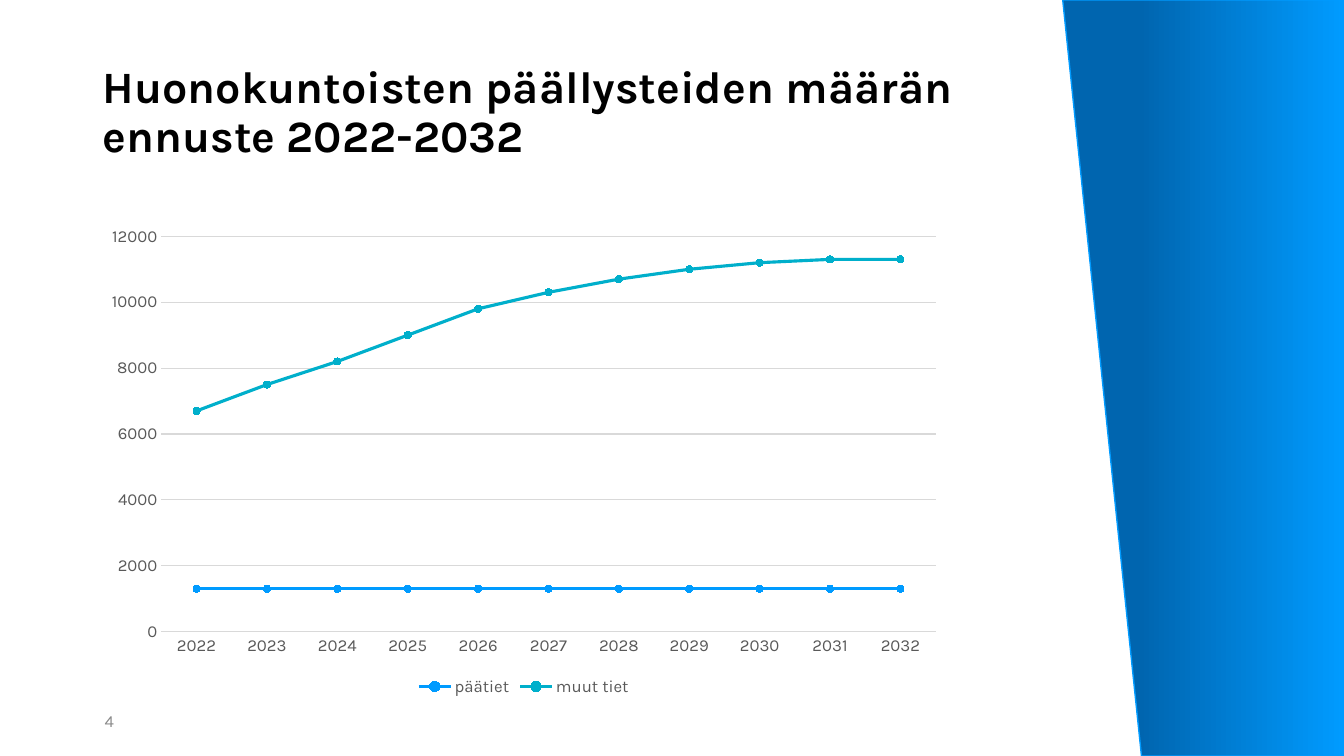
from pptx import Presentation
from pptx.chart.data import CategoryChartData
from pptx.dml.color import RGBColor
from pptx.enum.chart import XL_CHART_TYPE, XL_LEGEND_POSITION, XL_MARKER_STYLE, XL_TICK_MARK
from pptx.enum.text import MSO_ANCHOR
from pptx.util import Inches, Pt

FONT = "Karla"
BLACK = RGBColor(0x00, 0x00, 0x00)
DARK_GRAY = RGBColor(0x59, 0x59, 0x59)
GRAY = RGBColor(0x89, 0x89, 0x89)
GRID_GRAY = RGBColor(0xD9, 0xD9, 0xD9)
DEEP_BLUE = RGBColor(0x00, 0x65, 0xAF)
BLUE = RGBColor(0x00, 0x9B, 0xFF)
TEAL = RGBColor(0x00, 0xAF, 0xCB)

YEARS = [str(year) for year in range(2022, 2033)]
ROADS = [
    ("päätiet", BLUE, [1300] * len(YEARS)),
    ("muut tiet", TEAL,
     [6700, 7500, 8200, 9000, 9800, 10300, 10700, 11000, 11200, 11300, 11300]),
]


def style_font(font, size, color, bold=False):
    font.name = FONT
    font.size = Pt(size)
    font.bold = bold
    font.color.rgb = color


def style_line(line, color, width):
    line.color.rgb = color
    line.width = Pt(width)


def add_text(page, box, text, size, color, bold=False, line_spacing=1.0):
    frame = page.shapes.add_textbox(*map(Inches, box)).text_frame
    frame.word_wrap = True
    frame.vertical_anchor = MSO_ANCHOR.MIDDLE
    para = frame.paragraphs[0]
    para.line_spacing = line_spacing
    span = para.add_run()
    span.text = text
    style_font(span.font, size, color, bold)


def add_side_panel(page, box, slant):
    """Draw a gradient panel whose left edge leans right by a share of its width."""
    left, top, width, height = box
    right, bottom = left + width, top + height
    corners = [(right, top), (right, bottom), (left + slant * width, bottom)]
    builder = page.shapes.build_freeform(Inches(left), Inches(top))
    builder.add_line_segments([(Inches(x), Inches(y)) for x, y in corners])
    panel = builder.convert_to_shape()
    panel.shadow.inherit = False
    panel.fill.gradient()
    panel.fill.gradient_angle = 0
    stops = [(0.27, DEEP_BLUE), (1, BLUE)]
    for stop, (position, color) in zip(panel.fill.gradient_stops, stops):
        stop.position = position
        stop.color.rgb = color
    style_line(panel.line, BLUE, 1)


def style_axes(chart):
    years, amounts = chart.category_axis, chart.value_axis
    for axis in (years, amounts):
        axis.major_tick_mark = axis.minor_tick_mark = XL_TICK_MARK.NONE
        style_font(axis.tick_labels.font, 12, DARK_GRAY)
    style_line(years.format.line, GRID_GRAY, 0.75)
    amounts.format.line.fill.background()
    amounts.minimum_scale, amounts.maximum_scale = 0, 12000
    amounts.major_unit = 2000
    amounts.has_major_gridlines = True
    style_line(amounts.major_gridlines.format.line, GRID_GRAY, 0.75)


def add_forecast_chart(page, box):
    data = CategoryChartData(number_format="General")
    data.categories = YEARS
    for name, _, values in ROADS:
        data.add_series(name, values)
    chart = page.shapes.add_chart(
        XL_CHART_TYPE.LINE_MARKERS, *map(Inches, box), data).chart
    style_font(chart.font, 10, BLACK)
    chart.has_title = False
    chart.has_legend = True
    chart.legend.position = XL_LEGEND_POSITION.BOTTOM
    chart.legend.include_in_layout = False
    style_font(chart.legend.font, 12, DARK_GRAY)
    style_axes(chart)

    plot = chart.plots[0]
    plot.vary_by_categories = False
    for series, (_, color, _) in zip(plot.series, ROADS):
        series.smooth = False
        style_line(series.format.line, color, 2.25)
        marker = series.marker
        marker.style = XL_MARKER_STYLE.CIRCLE
        marker.size = 5
        marker.format.fill.solid()
        marker.format.fill.fore_color.rgb = color
        style_line(marker.format.line, color, 0.75)


def main():
    deck = Presentation()
    deck.slide_width, deck.slide_height = Inches(13.33), Inches(7.5)
    page = deck.slides.add_slide(deck.slide_layouts[6])
    add_side_panel(page, (10.54, 0, 2.79, 7.5), slant=0.28)
    add_text(page, (0.92, 0.4, 8.78, 1.45),
             "Huonokuntoisten päällysteiden määrän ennuste 2022-2032",
             size=32, color=BLACK, bold=True, line_spacing=0.9)
    add_text(page, (0.94, 6.95, 0.61, 0.4), "4", size=12, color=GRAY)
    add_forecast_chart(page, (0.94, 2.15, 8.51, 4.8))
    deck.save("out.pptx")


if __name__ == "__main__":
    main()
